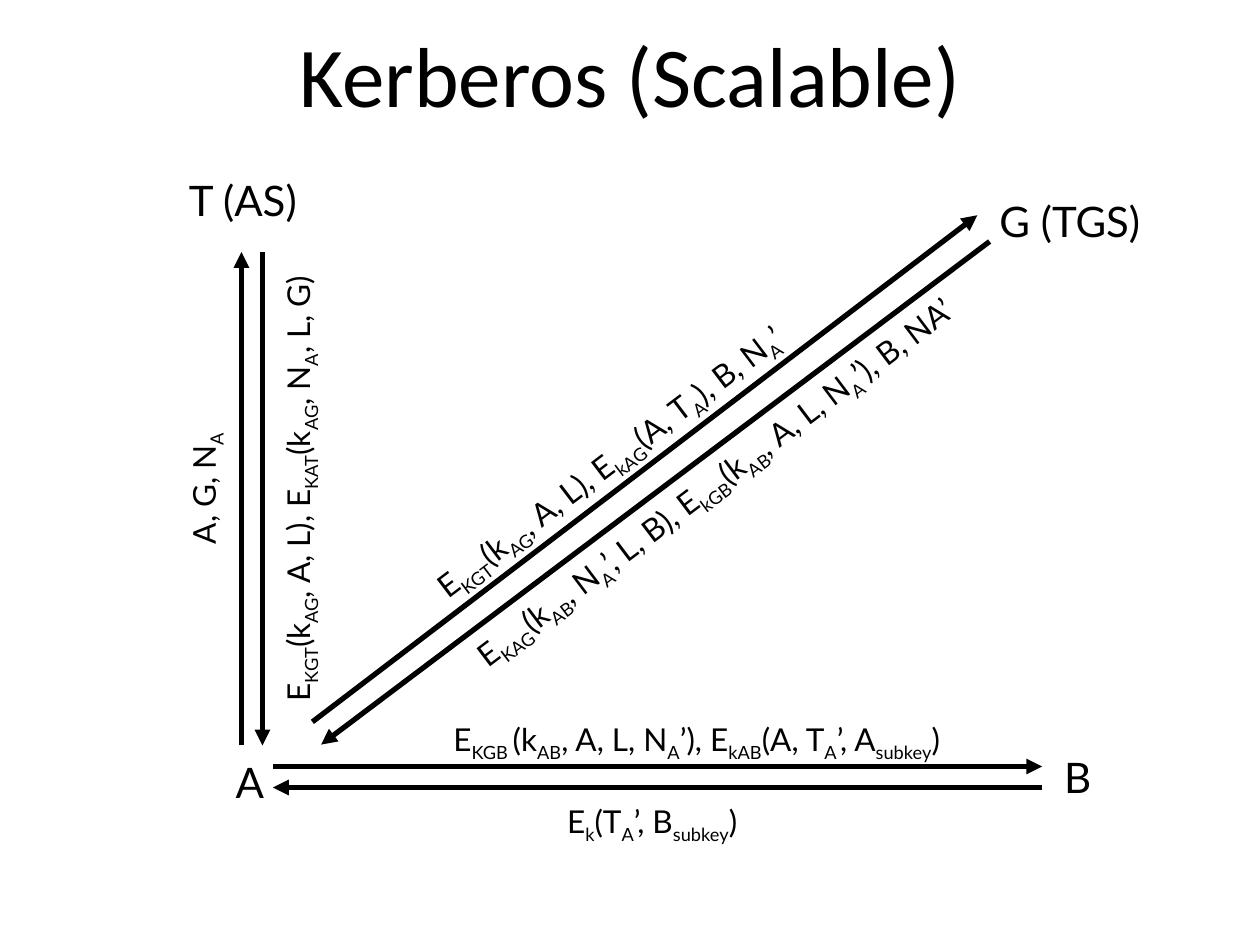
import pptx
import pptx.dml.color
import pptx.enum.shapes
import pptx.enum.text
import pptx.oxml.ns
import pptx.util
from lxml import etree

Pt = pptx.util.Pt
ALIGN = pptx.enum.text.PP_ALIGN
BLACK = "000000"

TITLE = ("Kerberos (Scalable)", (18, 12, 684, 60))

# text, (left, top, width, height)
PARTIES = [
    ("T (AS)", (100.8, 96, 82, 36)),
    ("A", (127.5, 428.5, 29, 36)),
    ("B", (601, 426, 29, 36)),
    ("G (TGS)", (564, 108, 100, 36)),
]

# text with subscripts in braces, (left, top, width, height), rotation, side inset, wrap
MESSAGES = [
    ("A, G, N{A}", (77, 264.2, 78.5, 29), 270, 7.2, False),
    ("E{KGT}(k{AG}, A, L), E{KAT}(k{AG}, N{A}, L, G)",
     (30.2, 253.4, 280, 29), 270, 7.2, False),
    ("E{KGB }(k{AB}, A, L, N{A}’), E{kAB}(A, T{A}’, A{subkey})",
     (252, 408, 321, 29), 0, 7.2, False),
    ("E{k}(T{A}’, B{subkey})", (317, 455, 124.5, 29), 0, 7.2, False),
    ("E{KGT}(k{AG}, A, L), E{kAG}(A, T{A}), B, N{A}’",
     (224, 240.5, 271.5, 29), 322.7, 0, True),
    ("E{KAG}(k{AB}, N{A}’, L, B), E{kGB}(k{AB}, A, L, N{A}’), B, NA’",
     (238.3, 253.4, 360, 29), 323, 0, False),
]

# start, end (the arrowhead is at the end)
ARROWS = [
    ((138, 426), (138, 144)),
    ((150, 144), (150, 426)),
    ((156, 438), (595.5, 438)),
    ((595.5, 450), (156, 450)),
    ((178.5, 412.5), (558.5, 123)),
    ((565.5, 138), (183.5, 425.5)),
]


def color(value):
    return pptx.dml.color.RGBColor.from_string(value)


def add_text(page, text, place, font, size, align=ALIGN.LEFT,
             rotation=0, inset=7.2, wrap=False, grow=True):
    """Add a text box; parts of the text in braces become subscripts."""
    box = page.shapes.add_textbox(*map(Pt, place))
    box.rotation = rotation
    frame = box.text_frame
    frame.word_wrap = wrap
    frame.margin_left = frame.margin_right = Pt(inset)
    if grow:
        frame.auto_size = pptx.enum.text.MSO_AUTO_SIZE.SHAPE_TO_FIT_TEXT
    else:
        frame.vertical_anchor = pptx.enum.text.MSO_ANCHOR.MIDDLE
    para = frame.paragraphs[0]
    para.alignment = align
    for index, part in enumerate(text.replace("}", "{").split("{")):
        span = para.add_run()
        span.text = part
        span.font.name = font
        span.font.size = Pt(size)
        span.font.color.rgb = color(BLACK)
        if index % 2:
            span.font._element.set("baseline", "-25000")


def add_arrow(page, start, end):
    arrow = page.shapes.add_connector(
        pptx.enum.shapes.MSO_CONNECTOR.STRAIGHT, *map(Pt, start + end))
    arrow.line.color.rgb = color(BLACK)
    arrow.line.width = Pt(3)
    qn = pptx.oxml.ns.qn
    etree.SubElement(arrow.line._get_or_add_ln(), qn("a:tailEnd"), type="triangle")
    etree.SubElement(arrow._element.spPr, qn("a:effectLst"))


def main():
    deck = pptx.Presentation()
    deck.slide_width, deck.slide_height = Pt(720), Pt(540)
    page = deck.slides.add_slide(deck.slide_layouts[6])
    add_text(page, *TITLE, "Calibri", 48.6, ALIGN.CENTER, wrap=True, grow=False)
    for text, place in PARTIES:
        add_text(page, text, place, "Lato", 24)
    for start, end in ARROWS:
        add_arrow(page, start, end)
    for text, place, rotation, inset, wrap in MESSAGES:
        add_text(page, text, place, "Lato", 18,
                 rotation=rotation, inset=inset, wrap=wrap)
    deck.save("out.pptx")


if __name__ == "__main__":
    main()
